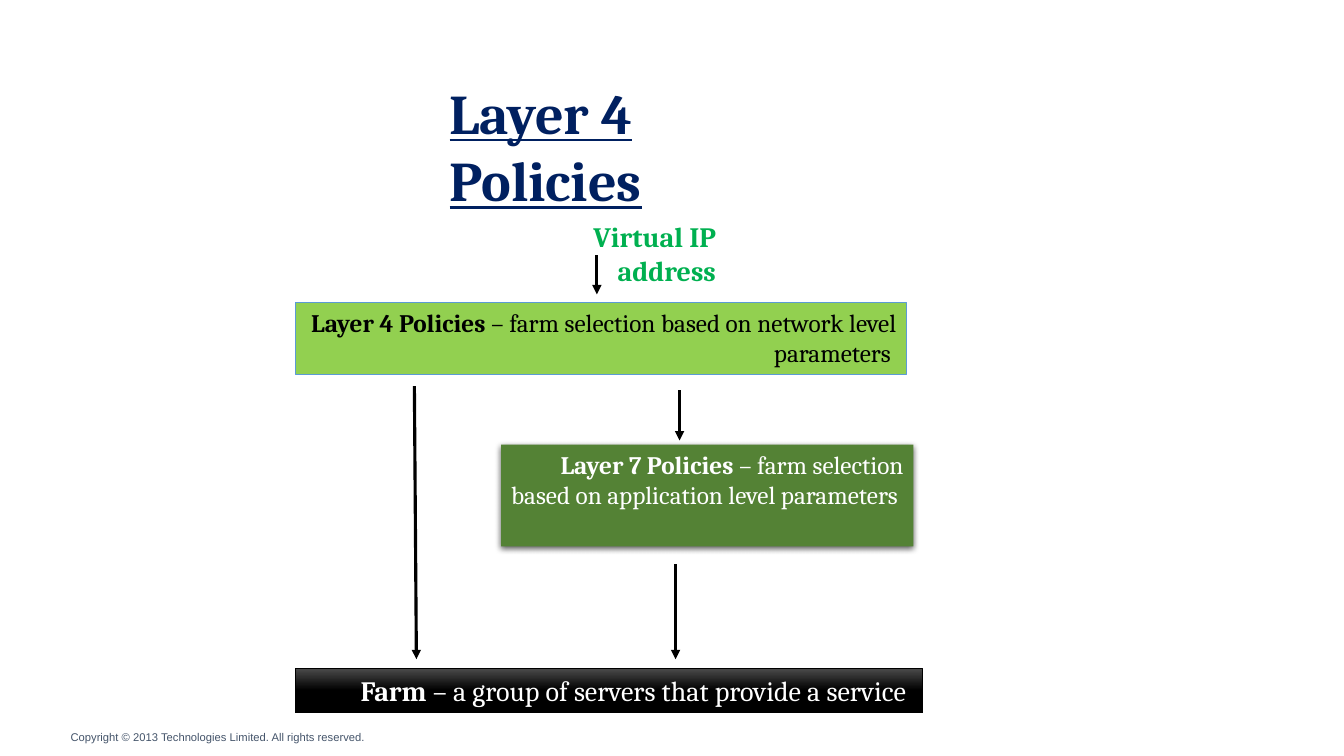
from dataclasses import dataclass

from lxml import etree
from pptx import Presentation
from pptx.dml.color import RGBColor
from pptx.enum.shapes import MSO_CONNECTOR, MSO_SHAPE
from pptx.enum.text import MSO_ANCHOR, PP_ALIGN
from pptx.oxml.ns import qn
from pptx.util import Inches, Pt

RECT = MSO_SHAPE.RECTANGLE
STRAIGHT = MSO_CONNECTOR.STRAIGHT
TOP = MSO_ANCHOR.TOP
LEFT, RIGHT = PP_ALIGN.LEFT, PP_ALIGN.RIGHT
BLACK, WHITE = "000000", "FFFFFF"


@dataclass
class Box:
    at: tuple[float, float, float, float]
    head: str
    body: str
    size: int
    color: str
    fill: str
    line: str = ""
    glow: str = ""
    shade: bool = False


@dataclass
class Arrow:
    x: float
    top: float
    end: float
    shift: float = 0


BOXES = [
    Box((2.93, 3, 6.06, 0.71), "Layer 4 Policies",
        " – farm selection based on network level parameters ",
        18, BLACK, "92D050", line="5B9BD5"),
    Box((4.97, 4.41, 4.09, 1.01), "Layer 7 Policies ",
        "– farm selection based on application level parameters ",
        18, WHITE, "548235", shade=True),
    Box((2.93, 6.63, 6.22, 0.44), "Farm",
        " – a group of servers that provide a service ",
        20, WHITE, BLACK, line=BLACK, glow="4B4B4B"),
]
ARROWS = [
    Arrow(5.92, 2.53, 2.92),
    Arrow(4.11, 3.83, 6.54, shift=0.02),
    Arrow(6.74, 3.87, 4.37),
    Arrow(6.7, 5.6, 6.54),
]


def rgb(code: str) -> RGBColor:
    return RGBColor.from_string(code)


def write(shape, *runs: tuple[str, bool], size: int, color: str,
          font: str = "Cambria", align=LEFT, under: bool = False,
          pads=(0.1, 0.05, 0.1, 0.05), wrap: bool = True) -> None:
    """Fill a shape with one paragraph of (text, bold) runs."""
    frame = shape.text_frame
    frame.word_wrap = wrap
    frame.vertical_anchor = TOP
    (frame.margin_left, frame.margin_top,
     frame.margin_right, frame.margin_bottom) = map(Inches, pads)
    par = frame.paragraphs[0]
    par.alignment = align
    for text, bold in runs:
        run = par.add_run()
        run.text = text
        run.font.name = font
        run.font.size = Pt(size)
        run.font.bold = bold
        run.font.underline = under
        run.font.color.rgb = rgb(color)


def add_text(slide, at: tuple, text: str, bold: bool = True, **form) -> None:
    write(slide.shapes.add_textbox(*map(Inches, at)), (text, bold), **form)


def add_shade(shape) -> None:
    """Put a soft black shadow below a shape."""
    effects = shape._element.spPr.find(qn("a:effectLst"))
    outer = etree.SubElement(effects, qn("a:outerShdw"), blurRad=str(Pt(4.5)),
                             dist=str(Pt(1.5)), dir="5400000", rotWithShape="0")
    tint = etree.SubElement(outer, qn("a:srgbClr"), val=BLACK)
    etree.SubElement(tint, qn("a:alpha"), val="63000")


def add_box(slide, box: Box) -> None:
    shape = slide.shapes.add_shape(RECT, *map(Inches, box.at))
    shape.shadow.inherit = False
    if box.glow:
        shape.fill.gradient()
        shape.fill.gradient_angle = 270
        stops = zip(shape.fill.gradient_stops, (box.glow, box.fill), (0, 0.5))
        for stop, color, place in stops:
            stop.color.rgb = rgb(color)
            stop.position = place
    else:
        shape.fill.solid()
        shape.fill.fore_color.rgb = rgb(box.fill)
    if box.line:
        shape.line.color.rgb = rgb(box.line)
        shape.line.width = Pt(0.5)
    else:
        shape.line.fill.background()
    if box.shade:
        add_shade(shape)
    write(shape, (box.head, True), (box.body, False),
          size=box.size, color=box.color, align=RIGHT)


def add_arrow(slide, arrow: Arrow) -> None:
    ends = (arrow.x, arrow.top, arrow.x + arrow.shift, arrow.end)
    link = slide.shapes.add_connector(STRAIGHT, *map(Inches, ends))
    link.line.color.rgb = rgb(BLACK)
    link.line.width = Pt(2.25)
    etree.SubElement(link.line._get_or_add_ln(), qn("a:tailEnd"), type="triangle")
    etree.SubElement(link._element.spPr, qn("a:effectLst"))


def main() -> None:
    deck = Presentation()
    deck.slide_width, deck.slide_height = Inches(13.33), Inches(7.5)
    slide = deck.slides.add_slide(deck.slide_layouts[6])
    add_text(slide, (0.7, 7.25, 2.97, 0.13),
             "Copyright © 2013 Technologies Limited. All rights reserved.",
             bold=False, size=8, color="44546A", font="Arial",
             pads=(0, 0, 0, 0), wrap=False)
    add_text(slide, (3.86, 0.73, 4.36, 0.77), "Layer 4 Policies",
             size=40, color="002060", under=True, pads=(0.6, 0.05, 1.2, 0.05))
    add_text(slide, (4.89, 2.13, 2.31, 0.44), "Virtual IP address",
             size=20, color="00B050", align=RIGHT, pads=(0.5, 0.05, 0.1, 0.05))
    for box in BOXES:
        add_box(slide, box)
    for arrow in ARROWS:
        add_arrow(slide, arrow)
    deck.save("out.pptx")


if __name__ == "__main__":
    main()
